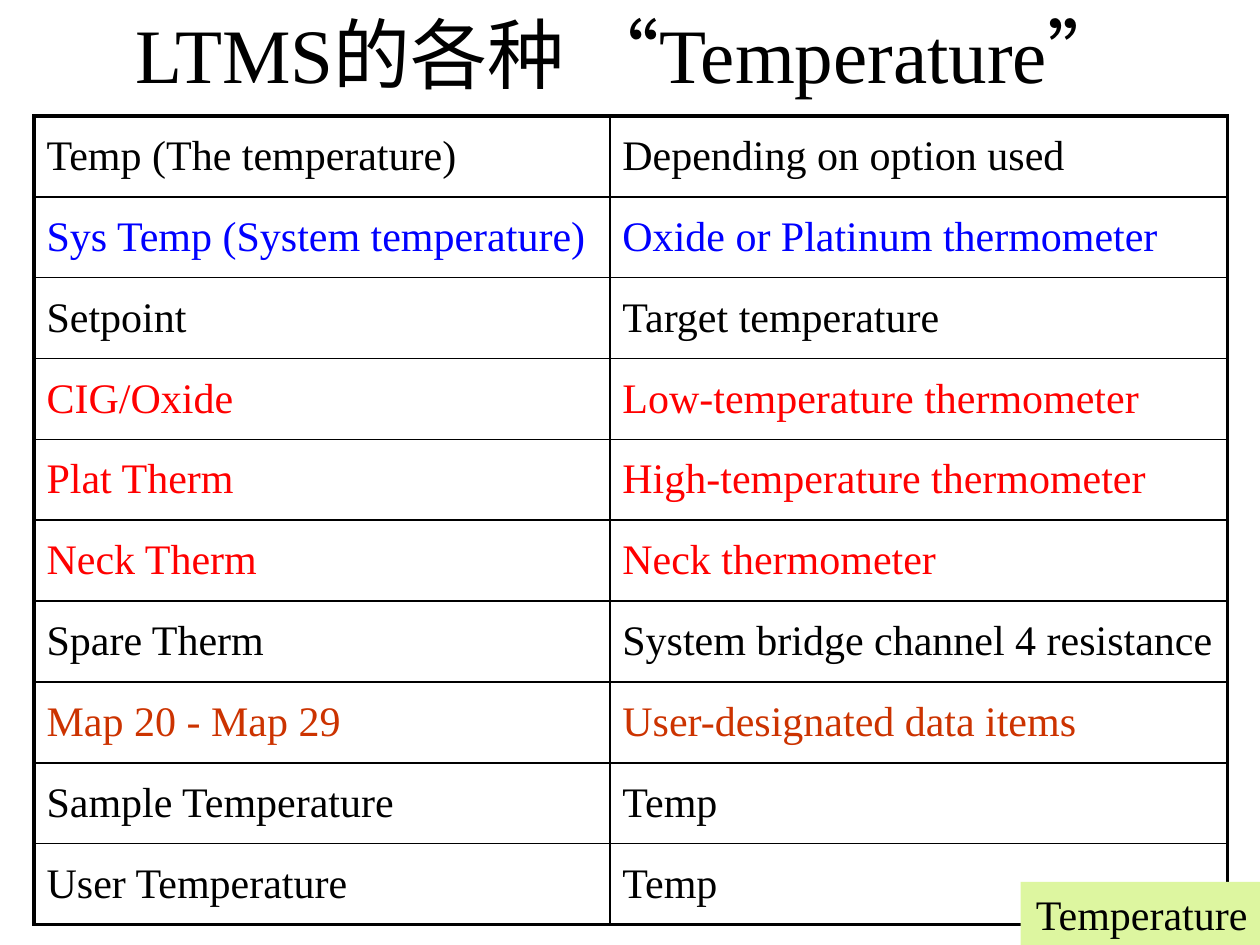
"""Build a slide that lists the kinds of temperature in a measurement system."""
from lxml import etree
from pptx import Presentation
from pptx.dml.color import RGBColor
from pptx.enum.shapes import MSO_SHAPE
from pptx.enum.text import MSO_ANCHOR, PP_ALIGN
from pptx.oxml.ns import qn
from pptx.util import Inches, Pt

BLACK, BLUE, RED, RUST = "000000", "0000FF", "FF0000", "CC3300"
SERIF, SANS = "Times New Roman", "Arial"
READINGS = [
    ("Temp (The temperature)", "Depending on option used", BLACK),
    ("Sys Temp (System temperature)", "Oxide or Platinum thermometer", BLUE),
    ("Setpoint", "Target temperature", BLACK),
    ("CIG/Oxide", "Low-temperature thermometer", RED),
    ("Plat Therm", "High-temperature thermometer", RED),
    ("Neck Therm", "Neck thermometer", RED),
    ("Spare Therm", "System bridge channel 4 resistance", BLACK),
    ("Map 20 - Map 29", "User-designated data items", RUST),
    ("Sample Temperature", "Temp", BLACK),
    ("User Temperature", "Temp", BLACK),
]


def add_text(paragraph, text, size, color=BLACK, font=SERIF):
    """Append a formatted run to a paragraph."""
    run = paragraph.add_run()
    run.text = text
    for name, value in {"size": Pt(size), "name": font}.items():
        setattr(run.font, name, value)
    run.font.color.rgb = RGBColor.from_string(color)


def add_border(cell, side, width):
    """Draw one black edge of a table cell."""
    edge = etree.SubElement(cell._tc.get_or_add_tcPr(), qn(f"a:ln{side}"), w=str(Pt(width)))
    fill = etree.SubElement(edge, qn("a:solidFill"))
    etree.SubElement(fill, qn("a:srgbClr"), val=BLACK)


prs = Presentation()
prs.slide_width, prs.slide_height = Inches(10), Inches(7.5)
slide = prs.slides.add_slide(prs.slide_layouts[5])

title = slide.shapes.title
title_box = {"left": 0.75, "top": 0, "width": 8.5, "height": 0.83}
for name, value in title_box.items():
    setattr(title, name, Inches(value))
title.text_frame.vertical_anchor = MSO_ANCHOR.MIDDLE
heading = title.text_frame.paragraphs[0]
heading.alignment = PP_ALIGN.CENTER
for text, font in [("LTMS的各种 ", SERIF), ("“", SANS), ("Temperature", SERIF), ("”", SANS)]:
    add_text(heading, text, 44, font=font)

readings = slide.shapes.add_table(
    len(READINGS), 2, Inches(0.27), Inches(0.92), Inches(9.47), Inches(6.42)
).table
readings.first_row = readings.horz_banding = False
for column, width in zip(readings.columns, (4.57, 4.9)):
    column.width = Inches(width)

last = len(READINGS) - 1
for row, (reading, meaning, color) in enumerate(READINGS):
    for col, text in enumerate((reading, meaning)):
        cell = readings.cell(row, col)
        outer = {"L": col == 0, "R": col == 1, "T": row == 0, "B": row == last}
        for side, is_outer in outer.items():
            add_border(cell, side, 2.25 if is_outer else 1)
        cell.fill.background()
        cell.vertical_anchor = MSO_ANCHOR.MIDDLE
        entry = cell.text_frame.paragraphs[0]
        entry.alignment = PP_ALIGN.JUSTIFY
        spacing = etree.SubElement(entry._p.get_or_add_pPr(), qn("a:spcBef"))
        etree.SubElement(spacing, qn("a:spcPct"), val="20000")
        add_text(entry, text, 24, color)

topic = slide.shapes.add_shape(
    MSO_SHAPE.RECTANGLE, Inches(8.1), Inches(7), Inches(1.9), Inches(0.5)
)
topic.shadow.inherit = False
topic.fill.solid()
topic.fill.fore_color.rgb = RGBColor.from_string("DDF6A0")
topic.line.fill.background()
topic.text_frame.word_wrap = False
label = topic.text_frame.paragraphs[0]
label.alignment = PP_ALIGN.RIGHT
add_text(label, "Temperature", 24)

prs.save("out.pptx")
